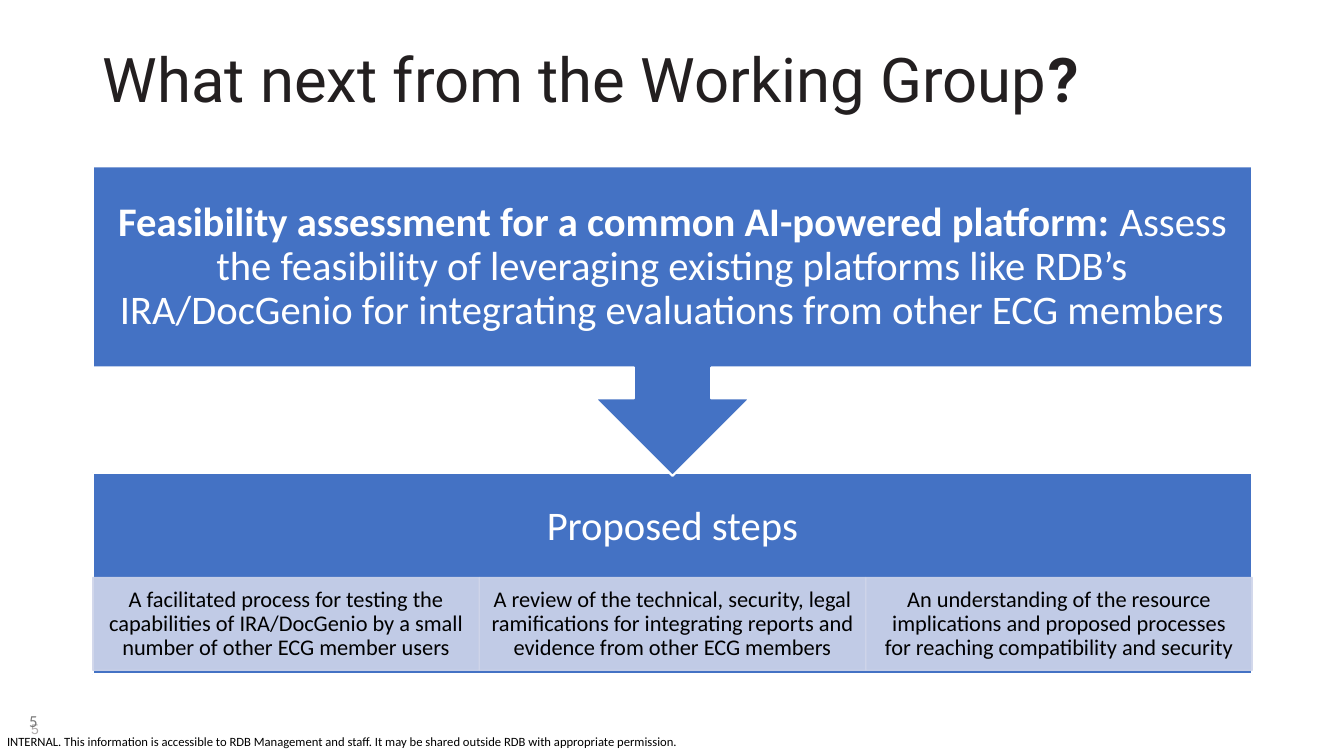
from dataclasses import dataclass

from lxml.etree import SubElement
from pptx import Presentation
from pptx.dml.color import RGBColor
from pptx.enum.shapes import MSO_SHAPE as Preset
from pptx.enum.text import MSO_ANCHOR as Anchor, PP_ALIGN as Align
from pptx.oxml.ns import qn
from pptx.shapes.autoshape import Shape
from pptx.util import Inches, Pt

BLUE = RGBColor(0x44, 0x72, 0xC4)
PALE_BLUE = RGBColor(0xCF, 0xD5, 0xEA)
WHITE = RGBColor(0xFF, 0xFF, 0xFF)
BLACK = RGBColor(0x00, 0x00, 0x00)
INK = RGBColor(0x23, 0x1F, 0x20)
GREY = RGBColor(0x79, 0x79, 0x79)
LIGHT_GREY = RGBColor(0xAF, 0xAB, 0xAB)

LEFT, WIDTH = 0.92, 11.5
STEP_TOP, STEP_HEIGHT = 5.73, 0.92


@dataclass(frozen=True)
class Area:
    left: float
    top: float
    width: float
    height: float

    def emu(self) -> tuple[int, int, int, int]:
        return (Inches(self.left), Inches(self.top),
                Inches(self.width), Inches(self.height))


@dataclass(frozen=True)
class Style:
    size: float
    color: RGBColor
    font: str = "Calibri"
    align: Align = Align.LEFT
    anchor: Anchor = Anchor.MIDDLE
    spacing: float = 1.0
    margins: tuple[float, float, float, float] = (0.1, 0.05, 0.1, 0.05)


@dataclass(frozen=True)
class Words:
    text: str
    bold: bool = False


TITLE = Style(44, INK, "Roboto", spacing=0.9)
HEADLINE = Style(29, WHITE, align=Align.CENTER, spacing=0.9,
                 margins=(0.23, 0.23, 0.23, 0.23))
# The deep bottom margin keeps the heading above the row of steps.
STEPS_HEADING = Style(29, WHITE, align=Align.CENTER, spacing=0.9,
                      margins=(0.23, 0.23, 0.23, 1.15))
STEP = Style(16, BLACK, align=Align.CENTER, spacing=0.9,
             margins=(0.12, 0.02, 0.12, 0.02))
FOOTER_NUMBER = Style(10, LIGHT_GREY, "Arial", anchor=Anchor.TOP)
PAGE_NUMBER = Style(12, GREY)
NOTICE = Style(9, BLACK, anchor=Anchor.TOP, margins=(0, 0, 0, 0))

STEPS = (
    "A facilitated process for testing the capabilities of IRA/DocGenio "
    "by a small number of other ECG member users",
    "A review of the technical, security, legal ramifications for "
    "integrating reports and evidence from other ECG members",
    "An understanding of the resource implications and proposed processes "
    "for reaching compatibility and security",
)


def write(target: Shape, style: Style, *words: Words) -> None:
    frame = target.text_frame
    frame.word_wrap = True
    frame.vertical_anchor = style.anchor
    (frame.margin_left, frame.margin_top,
     frame.margin_right, frame.margin_bottom) = map(Inches, style.margins)
    paragraph = frame.paragraphs[0]
    paragraph.alignment = style.align
    paragraph.line_spacing = style.spacing
    for part in words:
        run = paragraph.add_run()
        run.text = part.text
        run.font.name = style.font
        run.font.size = Pt(style.size)
        run.font.bold = part.bold
        run.font.color.rgb = style.color


def add_text(slide, area: Area, style: Style, *words: Words) -> None:
    write(slide.shapes.add_textbox(*area.emu()), style, *words)


def add_block(slide, preset: Preset, area: Area, fill: RGBColor,
              line: RGBColor, line_width: float) -> Shape:
    block = slide.shapes.add_shape(preset, *area.emu())
    block.shadow.inherit = False
    block.fill.solid()
    block.fill.fore_color.rgb = fill
    block.line.color.rgb = line
    block.line.width = Pt(line_width)
    return block


def set_opacity(block: Shape, percent: int) -> None:
    """Apply the opacity to both fill and outline."""
    for color in block.element.spPr.iter(qn("a:srgbClr")):
        SubElement(color, qn("a:alpha"), val=str(percent * 1000))


def main() -> None:
    deck = Presentation()
    deck.slide_width, deck.slide_height = Inches(13.33), Inches(7.5)
    slide = deck.slides.add_slide(deck.slide_layouts[6])

    add_text(slide, Area(0.21, 7.1, 13.03, 0.4), FOOTER_NUMBER, Words("5"))
    add_text(slide, Area(0.07, 7.28, 6.7, 0.15), NOTICE, Words(
        "INTERNAL. This information is accessible to RDB Management and staff. "
        "It may be shared outside RDB with appropriate permission."))
    add_text(slide, Area(LEFT, 0.09, WIDTH, 1.45), TITLE,
             Words("What next from the Working Group"), Words("?", bold=True))
    add_text(slide, Area(0.19, 6.95, 3, 0.4), PAGE_NUMBER, Words("5"))

    proposal = add_block(slide, Preset.RECTANGLE, Area(LEFT, 4.69, WIDTH, 2),
                         BLUE, WHITE, 1.5)
    write(proposal, STEPS_HEADING, Words("Proposed steps"))

    step_width = WIDTH / len(STEPS)
    for index, text in enumerate(STEPS):
        area = Area(LEFT + index * step_width, STEP_TOP, step_width, STEP_HEIGHT)
        step = add_block(slide, Preset.RECTANGLE, area, PALE_BLUE, PALE_BLUE, 1)
        set_opacity(step, 90)
        write(step, STEP, Words(text))

    callout = add_block(slide, Preset.UP_ARROW_CALLOUT,
                        Area(LEFT, 1.65, WIDTH, 3.07), BLUE, WHITE, 1.5)
    callout.rotation = 180
    add_text(slide, Area(LEFT, 1.65, WIDTH, 2), HEADLINE,
             Words("Feasibility assessment for a common AI-powered platform: ",
                   bold=True),
             Words("Assess the feasibility of leveraging existing platforms like "
                   "RDB’s IRA/DocGenio for integrating evaluations from other "
                   "ECG members"))

    deck.save("out.pptx")


if __name__ == "__main__":
    main()
